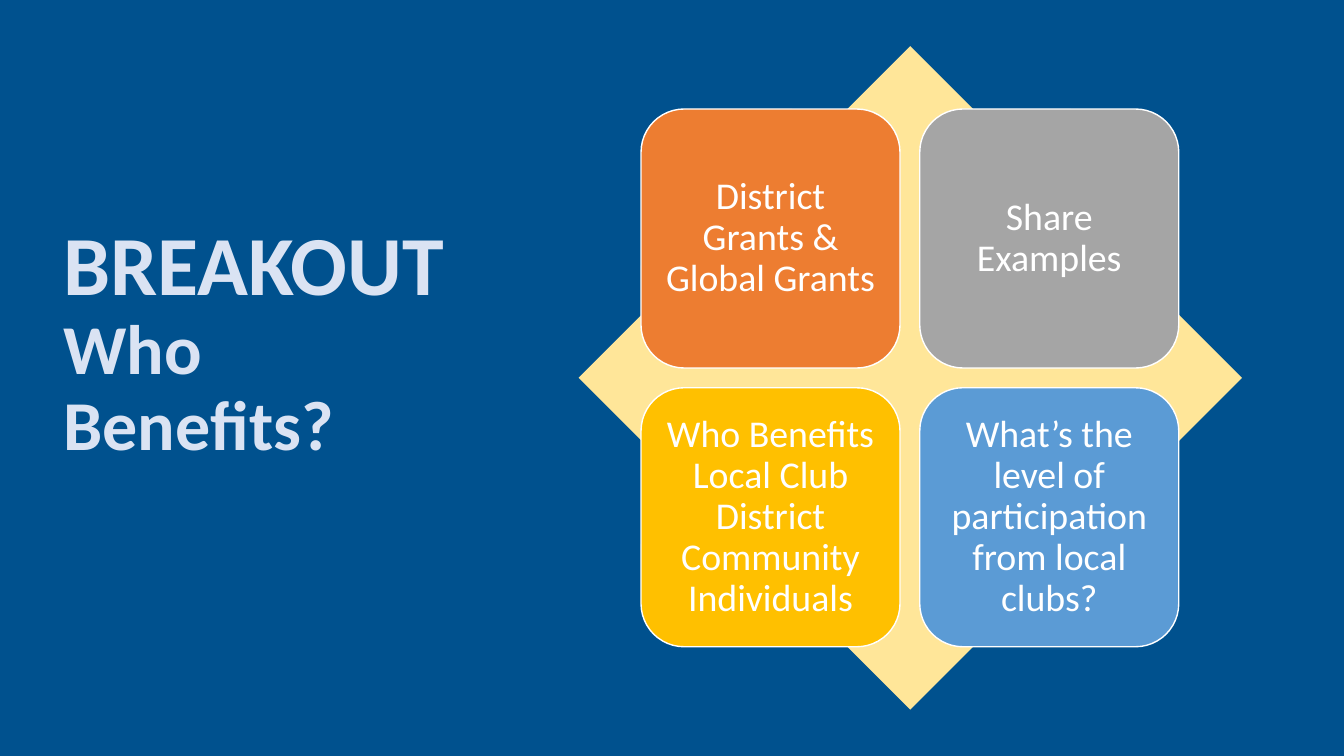
"""Build the breakout slide: a title beside four cards on a diamond."""
from dataclasses import dataclass

import pptx
import pptx.dml.color
import pptx.enum.shapes
import pptx.enum.text
import pptx.util

Pt = pptx.util.Pt
Shape = pptx.enum.shapes.MSO_SHAPE
Align = pptx.enum.text.PP_ALIGN

COLOURS = {
    "navy": "00518E",
    "pale blue": "DAE3F3",
    "cream": "FFE699",
    "orange": "ED7D31",
    "grey": "A5A5A5",
    "gold": "FFC000",
    "blue": "5B9BD5",
    "white": "FFFFFF",
}
FONT = "Calibri"
CARD_LEFT, CARD_TOP = 457.9, 77.9
CARD_SIZE, CARD_PITCH = 185, 199.1
CARD_INSET = 8


@dataclass(frozen=True)
class Card:
    """A rounded card and its place in the grid."""
    text: str
    colour: str
    row: int
    column: int


CARDS = [
    Card("District Grants & Global Grants", "orange", 0, 0),
    Card("Share Examples", "grey", 0, 1),
    Card("Who Benefits Local Club District Community Individuals", "gold", 1, 0),
    Card("What’s the level of participation from local clubs?", "blue", 1, 1),
]


def colour(name: str) -> pptx.dml.color.RGBColor:
    """Return the named colour."""
    return pptx.dml.color.RGBColor.from_string(COLOURS[name])


def set_frame(frame, inset_x: float, inset_y: float) -> None:
    """Wrap the text, centre it vertically and set its insets."""
    frame.word_wrap = True
    frame.auto_size = pptx.enum.text.MSO_AUTO_SIZE.NONE
    frame.vertical_anchor = pptx.enum.text.MSO_ANCHOR.MIDDLE
    frame.margin_left = frame.margin_right = Pt(inset_x)
    frame.margin_top = frame.margin_bottom = Pt(inset_y)


def set_para(para, align, colour_name: str, bold: bool) -> None:
    """Set the alignment, spacing and font shared by a paragraph."""
    para.alignment = align
    para.line_spacing = 0.9
    para.space_before = Pt(0)
    para.font.name = FONT
    para.font.bold = bold
    para.font.color.rgb = colour(colour_name)


def add_title(page) -> None:
    """Place the title and write its two sizes of text."""
    title = page.shapes.title
    title.left, title.top = Pt(38.2), Pt(65.5)
    title.width, title.height = Pt(305.3), Pt(360.7)
    set_frame(title.text_frame, 7.2, 3.6)
    para = title.text_frame.paragraphs[0]
    set_para(para, Align.LEFT, "pale blue", True)
    for text, size in (("BREAKOUT ", 60), ("Who Benefits?", 50)):
        span = para.add_run()
        span.text = text
        span.font.size = Pt(size)


def add_box(shapes, kind, left: float, top: float, size: float, fill: str):
    """Add a square-framed shape with a solid fill and no shadow."""
    box = shapes.add_shape(kind, Pt(left), Pt(top), Pt(size), Pt(size))
    box.shadow.inherit = False
    box.fill.solid()
    box.fill.fore_color.rgb = colour(fill)
    return box


def add_card(shapes, card: Card) -> None:
    """Add one card with its centred text."""
    box = add_box(
        shapes, Shape.ROUNDED_RECTANGLE,
        CARD_LEFT + card.column * CARD_PITCH,
        CARD_TOP + card.row * CARD_PITCH,
        CARD_SIZE, card.colour,
    )
    box.line.color.rgb = colour("white")
    box.line.width = Pt(1)
    set_frame(box.text_frame, CARD_INSET, CARD_INSET)
    para = box.text_frame.paragraphs[0]
    para.text = card.text
    set_para(para, Align.CENTER, "white", False)
    para.font.size = Pt(27)


def main() -> None:
    """Build and save the deck."""
    deck = pptx.Presentation()
    deck.slide_width, deck.slide_height = Pt(960), Pt(540)
    page = deck.slides.add_slide(deck.slide_layouts.get_by_name("Title Only"))
    page.background.fill.solid()
    page.background.fill.fore_color.rgb = colour("navy")
    add_title(page)
    matrix = page.shapes.add_group_shape()
    diamond = add_box(matrix.shapes, Shape.DIAMOND, 413.3, 33, 473.8, "cream")
    diamond.line.fill.background()
    for card in CARDS:
        add_card(matrix.shapes, card)
    deck.save("out.pptx")


if __name__ == "__main__":
    main()
